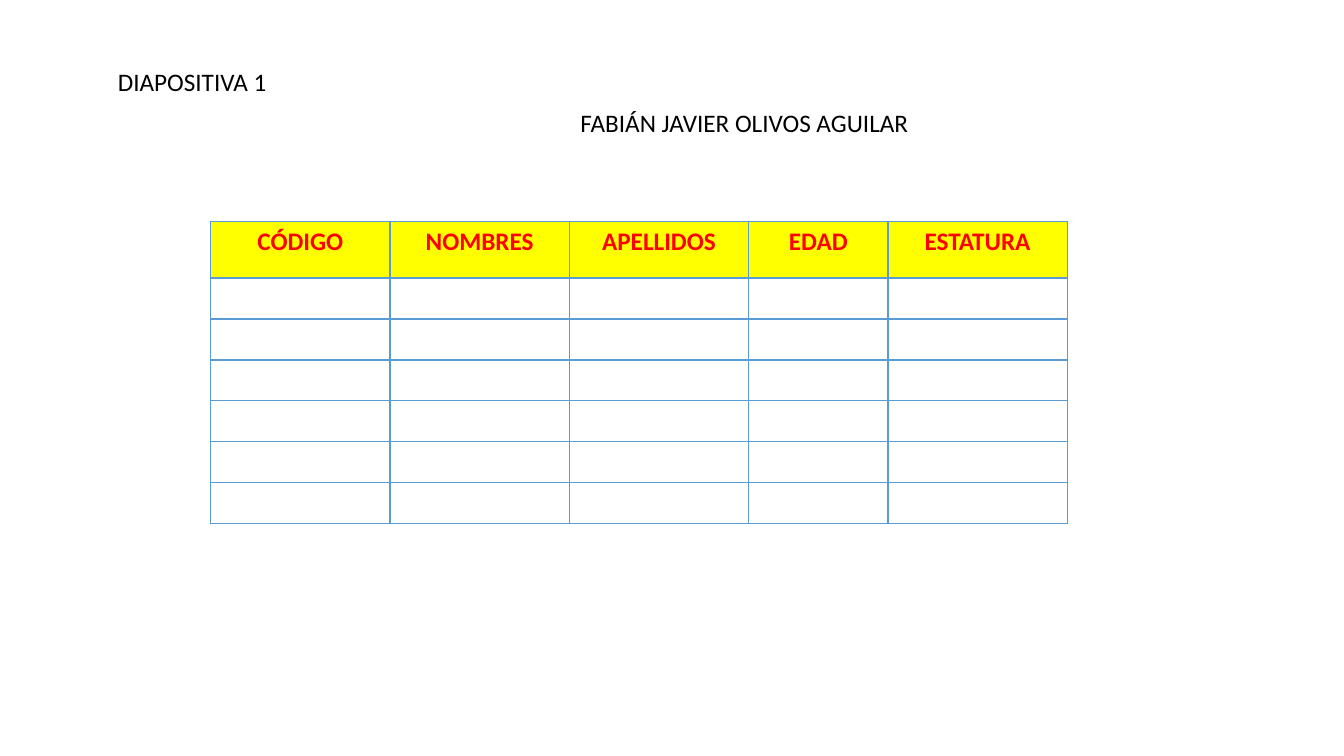
from lxml.etree import SubElement as Sub
from pptx import Presentation
from pptx.dml.color import RGBColor as Rgb
from pptx.enum.text import MSO_AUTO_SIZE as Fit, PP_ALIGN as Align
from pptx.oxml.ns import qn
from pptx.util import Cm, Pt

HEADS = ["CÓDIGO", "NOMBRES", "APELLIDOS", "EDAD", "ESTATURA"]
WIDTHS = [4.52, 4.52, 4.52, 3.51, 4.52]
HEIGHTS = [1.42] + [1.03] * 6
BLUE, RED, YELLOW, BLACK = "5B9BD5", "FF0000", "FFFF00", "000000"


def color(text):
    """Turn a hex string into a colour."""
    return Rgb.from_string(text)


def style(par, tone, bold=False):
    """Set the font of a paragraph."""
    font = par.font
    font.name, font.size, font.bold = "Calibri", Pt(18), bold
    font.color.rgb = color(tone)


def label(slide, text, left, top, width):
    """Add a one-line text box."""
    frame = slide.shapes.add_textbox(Cm(left), Cm(top), Cm(width), Cm(1.03)).text_frame
    frame.word_wrap = True
    frame.auto_size = Fit.SHAPE_TO_FIT_TEXT
    frame.text = text
    style(frame.paragraphs[0], BLACK)


def border(cell, side, points):
    """Draw one edge of a cell."""
    line = Sub(cell._tc.get_or_add_tcPr(), qn(f"a:ln{side}"), w=str(Pt(points)))
    fill = Sub(line, qn("a:solidFill"))
    Sub(fill, qn("a:srgbClr"), val=BLUE)


def edge(cell, top, bottom):
    """Draw all four edges of a cell."""
    for side, points in zip("LRTB", (1, 1, top, bottom)):
        border(cell, side, points)


def head(cell, text):
    """Fill in a heading cell."""
    edge(cell, 1, 2)
    cell.fill.solid()
    cell.fill.fore_color.rgb = color(YELLOW)
    cell.text = text
    par = cell.text_frame.paragraphs[0]
    par.alignment = Align.CENTER
    style(par, RED, True)


def grid(slide, left, top):
    """Add the table with its headings and empty rows."""
    table = slide.shapes.add_table(
        len(HEIGHTS), len(WIDTHS), Cm(left), Cm(top),
        Cm(sum(WIDTHS)), Cm(sum(HEIGHTS))).table
    table.horz_banding = False
    for col, width in zip(table.columns, WIDTHS):
        col.width = Cm(width)
    for num, (row, height) in enumerate(zip(table.rows, HEIGHTS)):
        row.height = Cm(height)
        for cell, text in zip(row.cells, HEADS):
            if num == 0:
                head(cell, text)
            else:
                edge(cell, 2 if num == 1 else 1, 1)
                cell.fill.background()


def main():
    """Build and save the slide."""
    deck = Presentation()
    deck.slide_width, deck.slide_height = Cm(33.87), Cm(19.05)
    slide = deck.slides.add_slide(deck.slide_layouts[6])
    grid(slide, 5.31, 5.59)
    label(slide, "DIAPOSITIVA 1", 2.72, 1.55, 5.23)
    label(slide, "FABIÁN JAVIER OLIVOS AGUILAR", 14.38, 2.59, 11.79)
    deck.save("out.pptx")


if __name__ == "__main__":
    main()
